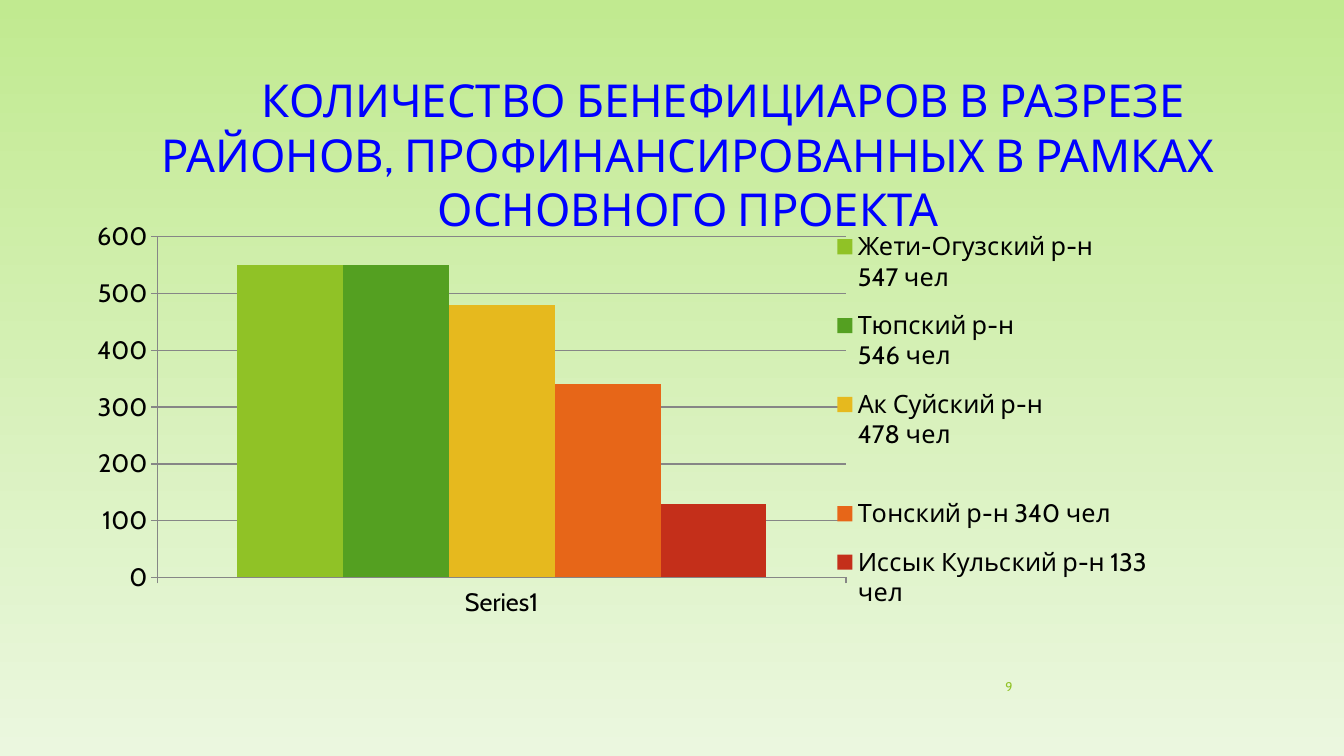
import pptx
import pptx.chart.data
import pptx.dml.color
import pptx.enum.chart
import pptx.enum.text
import pptx.oxml
import pptx.oxml.ns
import pptx.util

Inches = pptx.util.Inches
Pt = pptx.util.Pt

HEADING = "КОЛИЧЕСТВО БЕНЕФИЦИАРОВ В РАЗРЕЗЕ РАЙОНОВ, ПРОФИНАНСИРОВАННЫХ В РАМКАХ ОСНОВНОГО ПРОЕКТА"
PAGE_NUMBER = "9"
CATEGORY = "Series1"
DISTRICTS = [
    ("Жети-Огузский р-н \n547 чел", 550, "lime"),
    ("Тюпский р-н \n546 чел", 550, "green"),
    ("Ак Суйский р-н \n478 чел\n", 480, "yellow"),
    ("Тонский р-н 340 чел", 340, "orange"),
    ("Иссык Кульский р-н 133 чел", 130, "red"),
]
COLORS = {
    "lime": "90C226",
    "green": "54A021",
    "yellow": "E6B91E",
    "orange": "E76618",
    "red": "C42F1A",
    "heading": "0000FF",
    "text": "000000",
    "grid": "868686",
    "sky": "C1EA90",
    "ground": "EBF7DF",
}
FONT = "Cabin"
CHART_BOX = (0.74, 2.11, 11.19, 4.1)
PLOT_BOX = (1.56, 2.35, 6.83, 3.38)
LEGEND_BOX = (8.19, 2.12, 3.3, 4.09)


def rgb(name):
    return pptx.dml.color.RGBColor.from_string(COLORS[name])


def write(frame, text, size, color, align, anchor, indent=0):
    frame.word_wrap = True
    frame.auto_size = pptx.enum.text.MSO_AUTO_SIZE.NONE
    frame.vertical_anchor = anchor
    paragraph = frame.paragraphs[0]
    paragraph.alignment = align
    properties = paragraph._p.get_or_add_pPr()
    properties.set("marL", "0")
    properties.set("indent", str(Inches(indent)))
    run = paragraph.add_run()
    run.text = text
    run.font.name = FONT
    run.font.size = Pt(size)
    run.font.color.rgb = rgb(color)


def manual_layout(box, inner=False):
    left, top, width, height = CHART_BOX
    fractions = {
        "x": (box[0] - left) / width,
        "y": (box[1] - top) / height,
        "w": box[2] / width,
        "h": box[3] / height,
    }
    target = '<c:layoutTarget val="inner"/>' if inner else ""
    modes = '<c:xMode val="edge"/><c:yMode val="edge"/>'
    sizes = "".join(f'<c:{key} val="{value:.4f}"/>' for key, value in fractions.items())
    return pptx.oxml.parse_xml(
        f'<c:layout {pptx.oxml.ns.nsdecls("c")}><c:manualLayout>'
        f"{target}{modes}{sizes}</c:manualLayout></c:layout>"
    )


def replace_layout(parent, layout, position):
    for old in parent.findall(pptx.oxml.ns.qn("c:layout")):
        parent.remove(old)
    parent.insert(position, layout)


def add_district_chart(slide):
    data = pptx.chart.data.CategoryChartData()
    data.categories = [CATEGORY]
    for name, people, _ in DISTRICTS:
        data.add_series(name, [people])
    chart = slide.shapes.add_chart(
        pptx.enum.chart.XL_CHART_TYPE.COLUMN_CLUSTERED, *map(Inches, CHART_BOX), data
    ).chart
    chart.has_title = False
    chart.font.name = FONT
    chart.font.size = Pt(18)
    chart.font.color.rgb = rgb("text")

    columns = chart.plots[0]
    columns.gap_width = 150
    columns.overlap = 0
    columns.vary_by_categories = False
    for series, (_, _, color) in zip(columns.series, DISTRICTS):
        series.format.fill.solid()
        series.format.fill.fore_color.rgb = rgb(color)

    people_axis = chart.value_axis
    people_axis.minimum_scale = 0
    people_axis.maximum_scale = 600
    people_axis.major_unit = 100
    people_axis.has_major_gridlines = True
    lines = [people_axis.major_gridlines.format.line]
    for axis in (chart.category_axis, people_axis):
        axis.major_tick_mark = pptx.enum.chart.XL_TICK_MARK.OUTSIDE
        lines.append(axis.format.line)
    for line in lines:
        line.color.rgb = rgb("grid")
        line.width = Pt(1)

    chart.has_legend = True
    legend = chart.legend
    legend.position = pptx.enum.chart.XL_LEGEND_POSITION.RIGHT
    legend.include_in_layout = False
    replace_layout(legend._element, manual_layout(LEGEND_BOX), 1)
    plot_area = chart._chartSpace.chart.plotArea
    replace_layout(plot_area, manual_layout(PLOT_BOX, inner=True), 0)


def main():
    deck = pptx.Presentation()
    deck.slide_width = Inches(13.33)
    deck.slide_height = Inches(7.5)
    slide = deck.slides.add_slide(deck.slide_layouts[5])

    background = slide.background.fill
    background.gradient()
    background.gradient_angle = 270
    for stop, color in zip(background.gradient_stops, ("sky", "ground")):
        stop.color.rgb = rgb(color)

    align = pptx.enum.text.PP_ALIGN
    anchor = pptx.enum.text.MSO_ANCHOR
    heading = slide.shapes.title
    heading.left, heading.top, heading.width, heading.height = map(
        Inches, (0.74, 0.67, 12.17, 1.44)
    )
    write(heading.text_frame, HEADING, 32.4, "heading", align.CENTER, anchor.TOP, indent=0.7)

    add_district_chart(slide)

    page_number = slide.shapes.add_textbox(*map(Inches, (9.39, 6.61, 0.75, 0.4)))
    write(page_number.text_frame, PAGE_NUMBER, 9, "lime", align.RIGHT, anchor.MIDDLE)

    deck.save("out.pptx")


if __name__ == "__main__":
    main()
